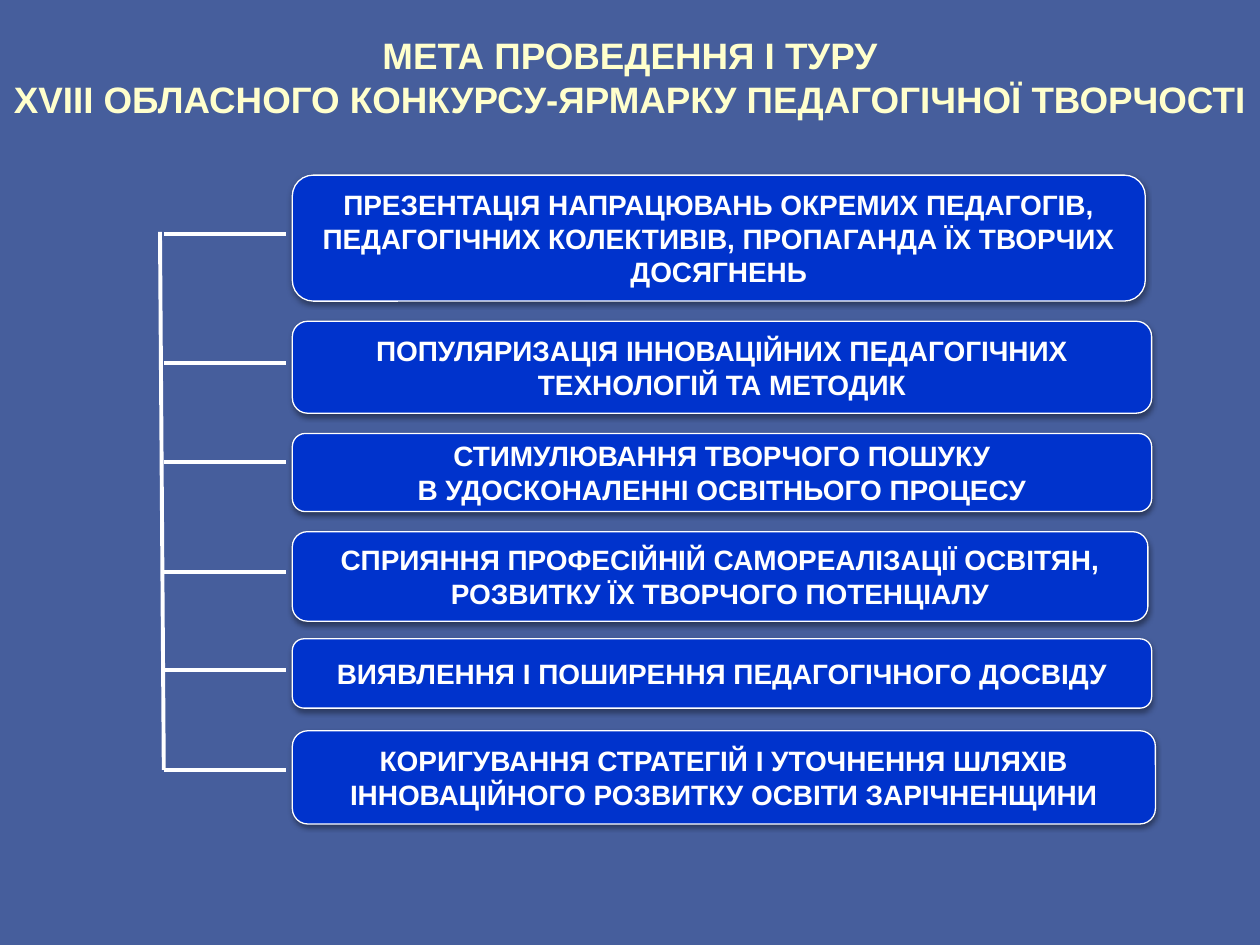
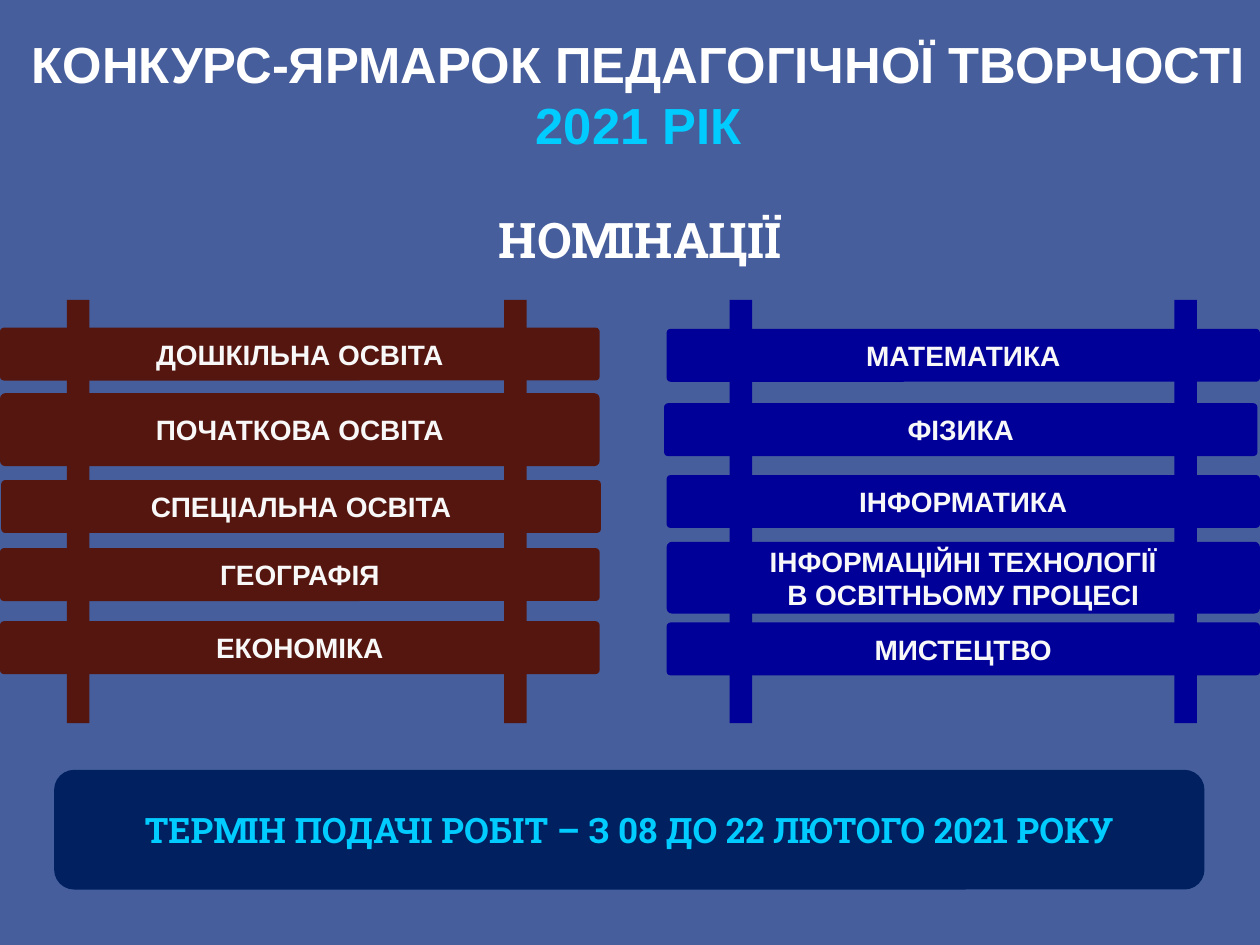
from lxml import etree
from pptx import Presentation
from pptx.dml.color import RGBColor
from pptx.enum.shapes import MSO_CONNECTOR, MSO_SHAPE
from pptx.enum.text import MSO_ANCHOR, MSO_AUTO_SIZE, PP_ALIGN
from pptx.oxml.ns import qn
from pptx.util import Inches, Pt

BACKGROUND = RGBColor(0x46, 0x5E, 0x9C)
WHITE = RGBColor(0xFF, 0xFF, 0xFF)
OFF_WHITE = RGBColor(0xF8, 0xF8, 0xF8)
CREAM = RGBColor(0xFF, 0xFF, 0xCC)
CYAN = RGBColor(0x00, 0xCC, 0xFF)
GOAL_BLUE = RGBColor(0x00, 0x33, 0xCC)
FENCE_BROWN = RGBColor(0x55, 0x16, 0x0F)
FENCE_BLUE = RGBColor(0x00, 0x00, 0x99)
NAVY = RGBColor(0x00, 0x20, 0x60)

BODY_FONT = "Arial"
SLAB_FONT = "Roboto Slab"
TITLE_ONLY = 5

# top, width, height, height of the branch line, text
GOALS = [
    (1.39, 6.77, 1.0, 1.86, ["ПРЕЗЕНТАЦІЯ НАПРАЦЮВАНЬ ОКРЕМИХ ПЕДАГОГІВ, "
                             "ПЕДАГОГІЧНИХ КОЛЕКТИВІВ, ПРОПАГАНДА ЇХ ТВОРЧИХ ДОСЯГНЕНЬ"]),
    (2.55, 6.82, 0.73, 2.88, ["ПОПУЛЯРИЗАЦІЯ ІННОВАЦІЙНИХ ПЕДАГОГІЧНИХ ТЕХНОЛОГІЙ ТА МЕТОДИК"]),
    (3.44, 6.82, 0.62, 3.67, ["СТИМУЛЮВАННЯ ТВОРЧОГО ПОШУКУ",
                              "В УДОСКОНАЛЕННІ ОСВІТНЬОГО ПРОЦЕСУ"]),
    (4.22, 6.79, 0.71, 4.54, ["СПРИЯННЯ ПРОФЕСІЙНІЙ САМОРЕАЛІЗАЦІЇ ОСВІТЯН, "
                              "РОЗВИТКУ ЇХ ТВОРЧОГО ПОТЕНЦІАЛУ"]),
    (5.07, 6.82, 0.55, 5.32, ["ВИЯВЛЕННЯ І ПОШИРЕННЯ ПЕДАГОГІЧНОГО ДОСВІДУ"]),
    (5.8, 6.85, 0.74, 6.11, ["КОРИГУВАННЯ СТРАТЕГІЙ І УТОЧНЕННЯ ШЛЯХІВ "
                             "ІННОВАЦІЙНОГО РОЗВИТКУ ОСВІТИ ЗАРІЧНЕНЩИНИ"]),
]

# shift from the fence's left edge, shift from its top, height, text
GENERAL_BOARDS = [
    (0, 0.22, 0.42, ["ДОШКІЛЬНА ОСВІТА"]),
    (0, 0.74, 0.58, ["ПОЧАТКОВА ОСВІТА"]),
    (0.01, 1.43, 0.42, ["СПЕЦІАЛЬНА ОСВІТА"]),
    (0, 1.97, 0.42, ["ГЕОГРАФІЯ"]),
    (0, 2.55, 0.42, ["ЕКОНОМІКА"]),
]
SCIENCE_BOARDS = [
    (0, 0.23, 0.42, ["МАТЕМАТИКА"]),
    (-0.02, 0.82, 0.42, ["ФІЗИКА"]),
    (0, 1.39, 0.42, ["ІНФОРМАТИКА"]),
    (0, 1.92, 0.57, ["ІНФОРМАЦІЙНІ ТЕХНОЛОГІЇ", "В ОСВІТНЬОМУ ПРОЦЕСІ"]),
    (0, 2.56, 0.42, ["МИСТЕЦТВО"]),
]


def inches(*lengths):
    return [Inches(n) for n in lengths]


def write(tf, lines, size, colors, font=BODY_FONT, wrap=True):
    """Fill a frame with centred bold lines; the last colour serves all further lines."""
    frame_format = dict(word_wrap=wrap, auto_size=MSO_AUTO_SIZE.NONE,
                        vertical_anchor=MSO_ANCHOR.MIDDLE)
    for name, value in frame_format.items():
        setattr(tf, name, value)
    for i, line in enumerate(lines):
        p = tf.paragraphs[0] if i == 0 else tf.add_paragraph()
        p.alignment = PP_ALIGN.CENTER
        r = p.add_run()
        r.text = line
        for name, value in dict(name=font, size=Pt(size), bold=True).items():
            setattr(r.font, name, value)
        r.font.color.rgb = colors[min(i, len(colors) - 1)]


def add_title(s, box, lines, size, colors):
    sp = s.shapes.title
    for name, value in zip(("left", "top", "width", "height"), inches(*box)):
        setattr(sp, name, value)
    tf = sp.text_frame
    tf.margin_left = tf.margin_right = 0
    write(tf, lines, size, colors)


def add_block(shapes, kind, box, fill, radius=None):
    """Add a flat filled shape without an outline."""
    sp = shapes.add_shape(kind, *inches(*box))
    sp.shadow.inherit = False
    sp.fill.solid()
    sp.fill.fore_color.rgb = fill
    sp.line.fill.background()
    if radius is not None:
        sp.adjustments[0] = radius
    return sp


def add_soft_shadow(sp):
    effects = sp._element.spPr.find(qn("a:effectLst"))
    shadow = etree.SubElement(effects, qn("a:outerShdw"), blurRad="40000", dist="20000",
                              dir="5400000", rotWithShape="0")
    color = etree.SubElement(shadow, qn("a:srgbClr"), val="000000")
    etree.SubElement(color, qn("a:alpha"), val="38000")


def add_line(s, x1, y1, x2, y2):
    line = s.shapes.add_connector(MSO_CONNECTOR.STRAIGHT, *inches(x1, y1, x2, y2))
    line.line.color.rgb = WHITE
    line.line.width = Pt(2.25)
    etree.SubElement(line._element.spPr, qn("a:effectLst"))


def add_goal_tree(s, trunk_x, boxes_x):
    """Hang the goal boxes on a slightly leaning trunk by horizontal branches."""
    branches = [goal[3] for goal in GOALS]
    add_line(s, trunk_x - 0.03, branches[0] - 0.02, trunk_x, branches[-1])
    for top, width, height, branch, lines in GOALS:
        add_line(s, trunk_x, branch, boxes_x - 0.05, branch)
        sp = add_block(s.shapes, MSO_SHAPE.ROUNDED_RECTANGLE,
                       (boxes_x, top, width, height), GOAL_BLUE)
        sp.line.color.rgb = WHITE
        sp.line.width = Pt(0.75)
        add_soft_shadow(sp)
        write(sp.text_frame, lines, 16, [WHITE])


def add_fence(s, box, posts, boards, fill):
    """Draw two posts and the nomination boards across them, as one group."""
    left, top, width, height = box
    shapes = s.shapes.add_group_shape().shapes
    for post in posts:
        add_block(shapes, MSO_SHAPE.RECTANGLE, (left + post, top, 0.18, height), fill)
    for dx, dy, board_height, lines in boards:
        sp = add_block(shapes, MSO_SHAPE.ROUNDED_RECTANGLE,
                       (left + dx, top + dy, width, board_height), fill, 0.076)
        write(sp.text_frame, lines, 16, [OFF_WHITE], wrap=False)


def build_goals(prs):
    s = prs.slides.add_slide(prs.slide_layouts[TITLE_ONLY])
    add_title(s, (0, 0.13, 10, 0.96),
              ["МЕТА ПРОВЕДЕННЯ І ТУРУ",
               "ХVIII ОБЛАСНОГО КОНКУРСУ-ЯРМАРКУ ПЕДАГОГІЧНОЇ ТВОРЧОСТІ"], 21, [CREAM])
    add_goal_tree(s, 1.3, 2.32)


def build_nominations(prs):
    s = prs.slides.add_slide(prs.slide_layouts[TITLE_ONLY])
    add_title(s, (0, 0.02, 10.14, 1.45),
              ["КОНКУРС-ЯРМАРОК ПЕДАГОГІЧНОЇ ТВОРЧОСТІ", "2021 РІК"], 29, [WHITE, CYAN])
    heading = s.shapes.add_textbox(*inches(0.16, 1.42, 9.84, 0.95))
    write(heading.text_frame, ["НОМІНАЦІЇ"], 28, [WHITE], SLAB_FONT)
    add_fence(s, (0, 2.38, 4.76, 3.36), (0.53, 4), GENERAL_BOARDS, FENCE_BROWN)
    add_fence(s, (5.29, 2.38, 4.71, 3.36), (0.5, 4.03), SCIENCE_BOARDS, FENCE_BLUE)
    deadline = add_block(s.shapes, MSO_SHAPE.ROUNDED_RECTANGLE, (0.43, 6.11, 9.13, 0.95), NAVY)
    write(deadline.text_frame, ["ТЕРМІН ПОДАЧІ РОБІТ – З 08 ДО 22 ЛЮТОГО 2021 РОКУ"],
          20, [CYAN], SLAB_FONT, wrap=False)


def main():
    prs = Presentation()
    prs.slide_width, prs.slide_height = inches(10, 7.5)
    fill = prs.slide_master.background.fill
    fill.solid()
    fill.fore_color.rgb = BACKGROUND
    build_goals(prs)
    build_nominations(prs)
    prs.save("out.pptx")


if __name__ == "__main__":
    main()
